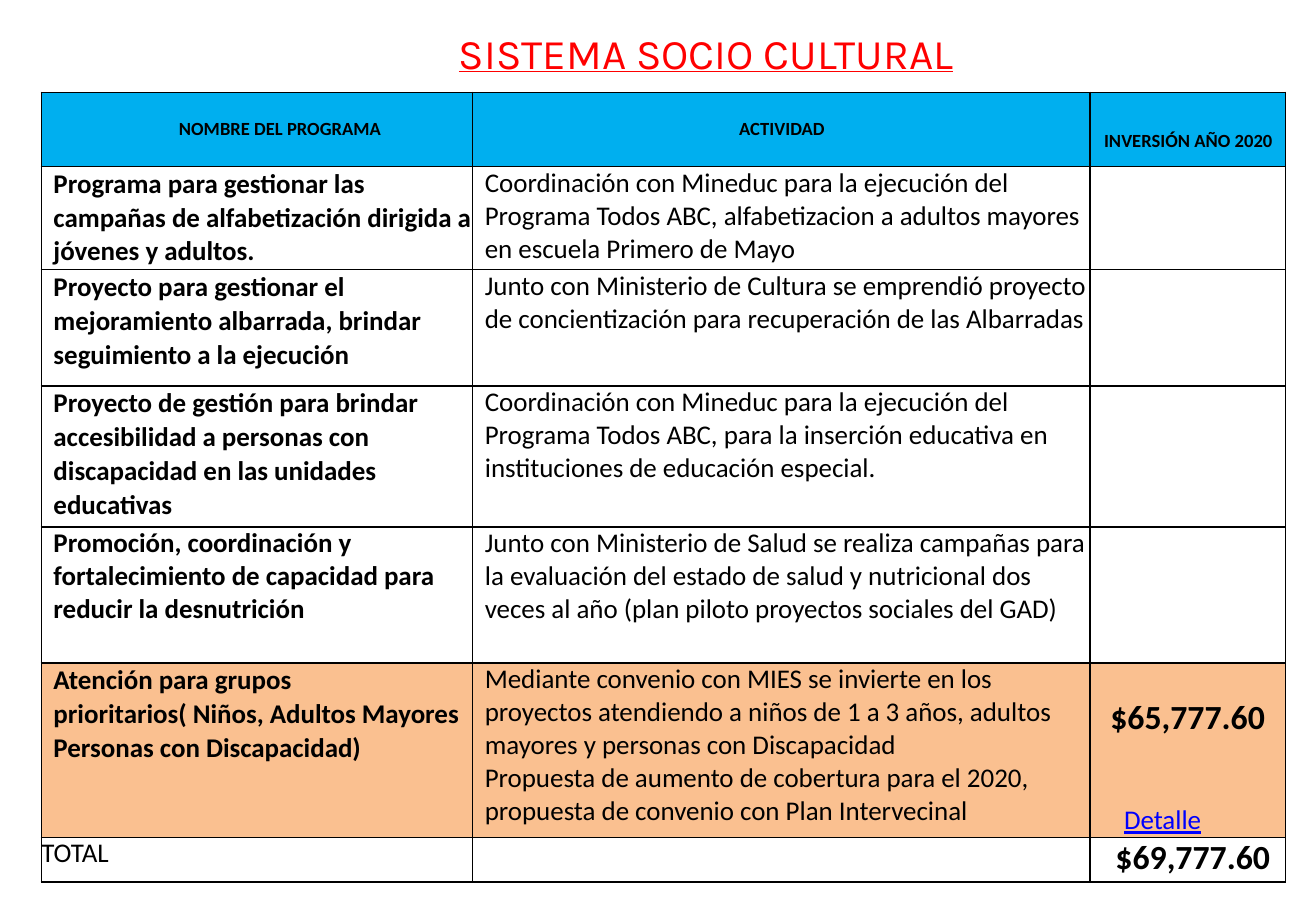
import dataclasses

import lxml.etree
import pptx
import pptx.dml.color
import pptx.enum.text
import pptx.oxml.ns
import pptx.util

Inches = pptx.util.Inches
Pt = pptx.util.Pt
Align = pptx.enum.text.PP_ALIGN
Anchor = pptx.enum.text.MSO_ANCHOR

BLACK, WHITE, RED, LINK = "000000", "FFFFFF", "FF0000", "0000FF"
HEADER_FILL, PRIORITY_FILL = "00AFEF", "FAC090"
COLUMN_WIDTHS = [3.55, 5.08, 1.61]
ROW_HEIGHTS = [0.61, 0.85, 0.96, 1.16, 1.12, 1.43, 0.37]


@dataclasses.dataclass
class Line:
    text: str
    size: float = 16
    bold: bool = False
    underline: bool = False
    color: str = BLACK
    font: str = "Calibri"
    align: Align = Align.LEFT
    indent: float = 0.1
    spacing: float = 1.0
    before: float = 0


@dataclasses.dataclass
class Cell:
    lines: list[Line]
    fill: str = WHITE
    anchor: Anchor = Anchor.TOP
    top: float = 0


def rgb(color: str) -> pptx.dml.color.RGBColor:
    return pptx.dml.color.RGBColor.from_string(color)


def set_attributes(target: object, values: dict) -> None:
    for name, value in values.items():
        setattr(target, name, value)


def write_lines(text_frame, lines: list[Line]) -> None:
    for index, line in enumerate(lines):
        paragraph = text_frame.paragraphs[0] if index == 0 else text_frame.add_paragraph()
        set_attributes(paragraph, {
            "alignment": line.align,
            "line_spacing": line.spacing,
            "space_before": Pt(line.before),
        })
        properties = paragraph._p.get_or_add_pPr()
        properties.set("marL", str(Inches(line.indent)))
        properties.set("indent", "0")
        run = paragraph.add_run()
        run.text = line.text
        set_attributes(run.font, {
            "name": line.font,
            "size": Pt(line.size),
            "bold": line.bold,
            "underline": line.underline,
        })
        run.font.color.rgb = rgb(line.color)


def add_borders(table_cell) -> None:
    properties = table_cell._tc.get_or_add_tcPr()
    for side in ("a:lnL", "a:lnR", "a:lnT", "a:lnB"):
        border = lxml.etree.SubElement(properties, pptx.oxml.ns.qn(side), w=str(Pt(1)))
        fill = lxml.etree.SubElement(border, pptx.oxml.ns.qn("a:solidFill"))
        lxml.etree.SubElement(fill, pptx.oxml.ns.qn("a:srgbClr"), val=BLACK)


def draw_cell(table_cell, cell: Cell) -> None:
    set_attributes(table_cell, {
        "margin_left": 0,
        "margin_right": 0,
        "margin_top": Inches(cell.top),
        "margin_bottom": 0,
        "vertical_anchor": cell.anchor,
    })
    add_borders(table_cell)
    table_cell.fill.solid()
    table_cell.fill.fore_color.rgb = rgb(cell.fill)
    write_lines(table_cell.text_frame, cell.lines)


def header(text: str, indent: float, top: float = 0) -> Cell:
    line = Line(text, size=11, bold=True, align=Align.CENTER, indent=indent)
    return Cell([line], HEADER_FILL, Anchor.MIDDLE, top)


def program(name: str, activities: list[str], fill: str = WHITE, spacing: float = 1.03,
            investment: Cell | None = None) -> list[Cell]:
    return [
        Cell([Line(name, bold=True, spacing=spacing)], fill),
        Cell([Line(activity) for activity in activities], fill),
        investment or Cell([]),
    ]


PRIORITY_INVESTMENT = Cell([
    Line("$65,777.60", size=20, bold=True, align=Align.CENTER, indent=0),
    Line("Detalle", underline=True, color=LINK, indent=0.28, before=39),
], PRIORITY_FILL, top=0.28)

ROWS = [
    [header("NOMBRE DEL PROGRAMA", 0.38), header("ACTIVIDAD", 0.01),
     header("INVERSIÓN AÑO 2020", 0.01, 0.19)],
    program("Programa para gestionar las campañas de alfabetización dirigida a jóvenes y adultos.",
            ["Coordinación con Mineduc para la ejecución del Programa Todos ABC, "
             "alfabetizacion a adultos mayores en escuela Primero de Mayo"]),
    program("Proyecto para gestionar el mejoramiento albarrada, brindar seguimiento a la ejecución",
            ["Junto con Ministerio de Cultura se emprendió proyecto de concientización "
             "para recuperación de las Albarradas"]),
    program("Proyecto de gestión para brindar accesibilidad a personas con discapacidad "
            "en las unidades educativas",
            ["Coordinación con Mineduc para la ejecución del Programa Todos ABC, "
             "para la inserción educativa en instituciones de educación especial."]),
    program("Promoción, coordinación y fortalecimiento de capacidad para reducir la desnutrición",
            ["Junto con Ministerio de Salud se realiza campañas para la evaluación del estado "
             "de salud y nutricional dos veces al año (plan piloto proyectos sociales del GAD)"],
            spacing=1.0),
    program("Atención para grupos prioritarios( Niños, Adultos Mayores Personas con Discapacidad)",
            ["Mediante convenio con MIES se invierte en los proyectos atendiendo a niños "
             "de 1 a 3 años, adultos mayores y personas con Discapacidad",
             "Propuesta de aumento de cobertura para el 2020, "
             "propuesta de convenio con Plan Intervecinal"],
            PRIORITY_FILL, investment=PRIORITY_INVESTMENT),
    [Cell([Line("TOTAL", indent=0)]), Cell([]),
     Cell([Line("$69,777.60", size=20, bold=True, indent=0.21)])],
]


def add_program_table(slide) -> None:
    frame = slide.shapes.add_table(
        len(ROWS), len(COLUMN_WIDTHS), Inches(0.34), Inches(0.76),
        Inches(sum(COLUMN_WIDTHS)), Inches(sum(ROW_HEIGHTS)))
    table = frame.table
    set_attributes(table, {"first_row": False, "horz_banding": False})
    for column, width in zip(table.columns, COLUMN_WIDTHS):
        column.width = Inches(width)
    for row, height, cells in zip(table.rows, ROW_HEIGHTS, ROWS):
        row.height = Inches(height)
        for table_cell, cell in zip(row.cells, cells):
            draw_cell(table_cell, cell)


def add_title(slide) -> None:
    title = slide.shapes.title
    set_attributes(title, {
        "left": Inches(2.3),
        "top": Inches(0.16),
        "width": Inches(7.02),
        "height": Inches(0.54),
    })
    set_attributes(title.text_frame, {
        "word_wrap": True,
        "auto_size": pptx.enum.text.MSO_AUTO_SIZE.NONE,
        "vertical_anchor": Anchor.MIDDLE,
    })
    write_lines(title.text_frame, [Line(
        "SISTEMA SOCIO CULTURAL", size=25, underline=True, color=RED,
        font="Karla", align=Align.CENTER, indent=0)])


def main() -> None:
    presentation = pptx.Presentation()
    set_attributes(presentation, {"slide_width": Inches(10.83), "slide_height": Inches(7.5)})
    slide = presentation.slides.add_slide(presentation.slide_layouts.get_by_name("Title Only"))
    add_program_table(slide)
    add_title(slide)
    presentation.save("out.pptx")


if __name__ == "__main__":
    main()
